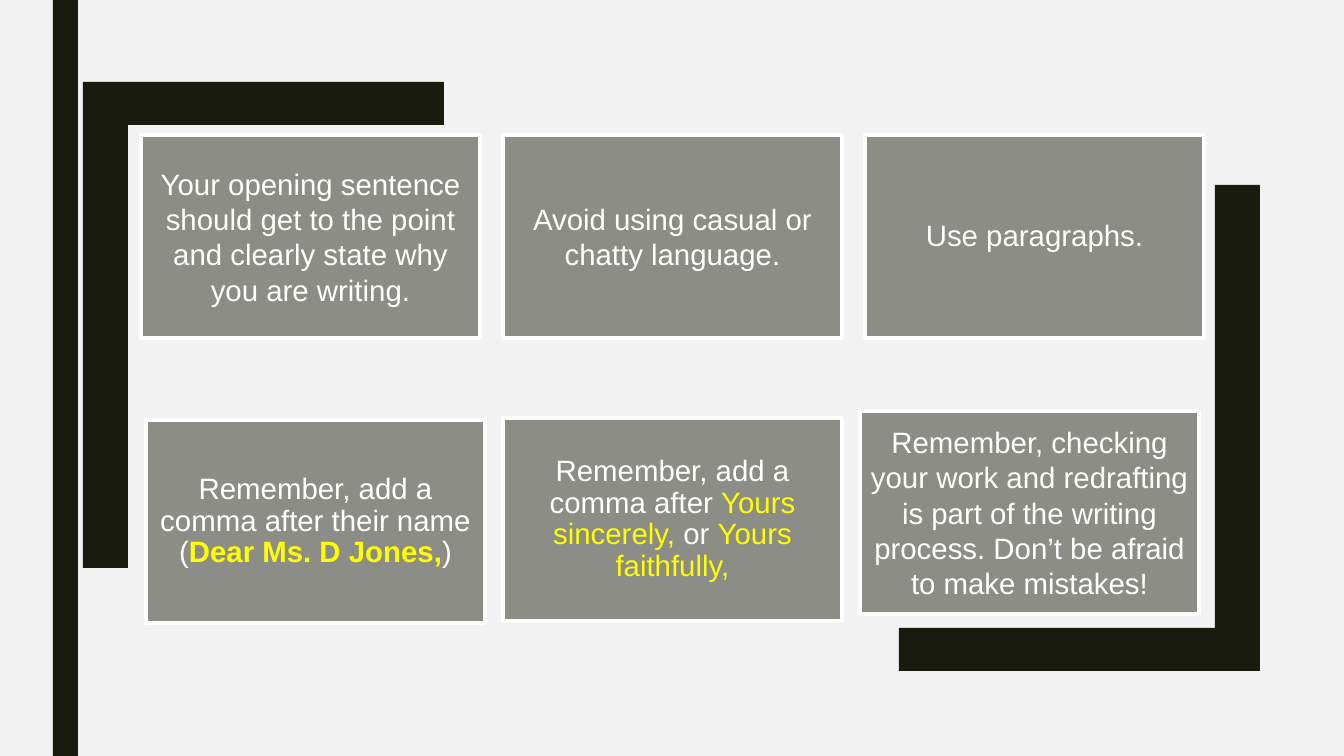
from pptx import Presentation
from pptx.dml.color import RGBColor
from pptx.enum.shapes import MSO_SHAPE
from pptx.enum.text import MSO_ANCHOR, PP_ALIGN
from pptx.util import Pt

RECT = MSO_SHAPE.RECTANGLE
MIDDLE = MSO_ANCHOR.MIDDLE
CENTER = PP_ALIGN.CENTER

# Content: left, top, line spacing, runs of (text, colour, bold)
TIPS = [
    (141, 135, 1.0, [("Your opening sentence should get to the point and "
                      "clearly state why you are writing.", "white", False)]),
    (503, 135, 1.0, [("Avoid using casual or chatty language.", "white", False)]),
    (865, 135, 0.9, [("Use paragraphs.", "white", False)]),
    (146, 420, 0.9, [("Remember, add a comma after their name (", "white", False),
                     ("Dear Ms. D Jones,", "yellow", True),
                     (")", "white", False)]),
    (503, 418, 0.9, [("Remember, add a comma after ", "white", False),
                     ("Yours sincerely, ", "yellow", False),
                     ("or ", "white", False),
                     ("Yours faithfully,", "yellow", False)]),
    (860, 411, 1.0, [("Remember, checking your work and redrafting is part of "
                      "the writing process. Don’t be afraid to make mistakes!",
                      "white", False)]),
]
COLORS = {"back": "F2F2F2", "dark": "191B0E", "card": "8C8D86",
          "white": "FFFFFF", "yellow": "FFFF00"}
WIDE, HIGH = 1344, 756
CARD_W, CARD_H, INSET = 339, 203, 9
BRACKET = [(128, 568), (83, 568), (83, 82), (444, 82), (444, 125), (128, 125)]
TURN = (1343, 753)  # sum of opposite corners for the half turn
SCALE = 914400 / 100.8


def px(n):
    return round(n * SCALE)


def color(name):
    return RGBColor.from_string(COLORS[name])


def paint(shape, fill, line=None):
    shape.shadow.inherit = False
    shape.fill.solid()
    shape.fill.fore_color.rgb = color(fill)
    if line:
        shape.line.color.rgb = color(line)
        shape.line.width = Pt(2.75)
    else:
        shape.line.fill.background()


def write(shape, runs, size=21, font="Arial", space=1.0):
    frame = shape.text_frame
    frame.word_wrap = True
    frame.vertical_anchor = MIDDLE
    frame.margin_left = frame.margin_right = px(INSET)
    frame.margin_top = frame.margin_bottom = px(INSET)
    para = frame.paragraphs[0]
    para.alignment = CENTER
    para.line_spacing = space
    for text, tone, bold in runs:
        run = para.add_run()
        run.text = text
        run.font.size = Pt(size)
        run.font.name = font
        run.font.bold = bold
        run.font.color.rgb = color(tone)


deck = Presentation()
deck.slide_width, deck.slide_height = px(WIDE), px(HIGH)
slide = deck.slides.add_slide(deck.slide_layouts[6])
slide.background.fill.solid()
slide.background.fill.fore_color.rgb = color("back")
shapes = slide.shapes

# Side bar
paint(shapes.add_shape(RECT, px(53), 0, px(25), px(HIGH)), "dark")

# Corner brackets, the second a half turn of the first
turned = [(TURN[0] - x, TURN[1] - y) for x, y in BRACKET]
for points in (turned, BRACKET):
    pen = shapes.build_freeform(*points[0], scale=SCALE)
    pen.add_line_segments(points[1:], close=True)
    paint(pen.convert_to_shape(), "dark")

# Tip cards
for left, top, space, runs in TIPS:
    card = shapes.add_shape(RECT, px(left), px(top), px(CARD_W), px(CARD_H))
    paint(card, "card", line="white")
    write(card, runs, space=space)

deck.save("out.pptx")
